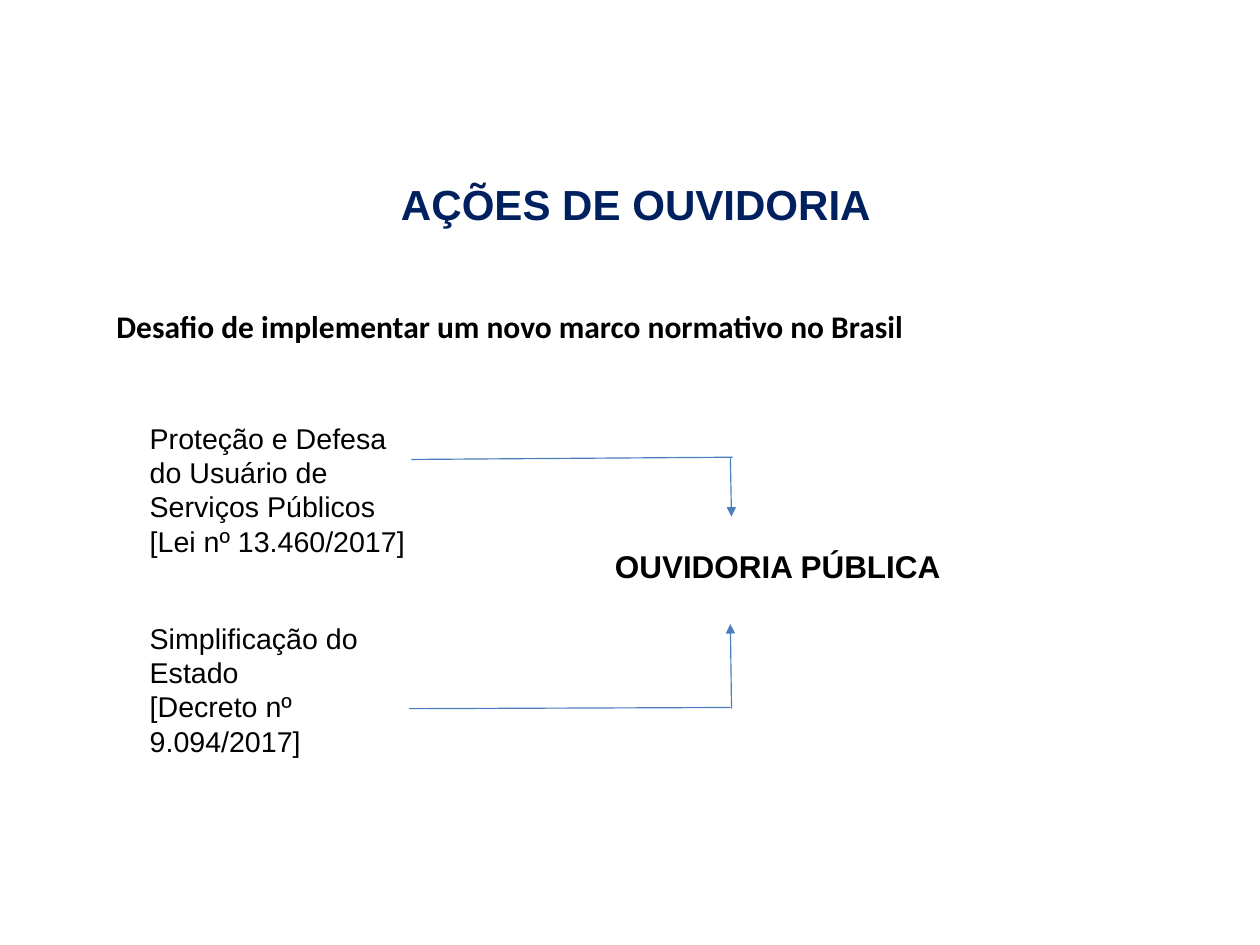
from pptx import Presentation
from pptx.dml.color import RGBColor
from pptx.enum.shapes import MSO_CONNECTOR
from pptx.enum.text import PP_ALIGN
from pptx.oxml.ns import qn
from pptx.util import Inches, Pt
from lxml.etree import SubElement

COLORS = {"navy": "002060", "black": "000000", "blue": "4B7EBC"}

# The page is 28 by 21 cm
deck = Presentation()
deck.slide_width = Inches(28 / 2.54)
deck.slide_height = Inches(21 / 2.54)
slide = deck.slides.add_slide(deck.slide_layouts[6])


def add_text(lines, place, size, bold=False, font="Arial", color="black", pad=0.08):
    box = slide.shapes.add_textbox(*map(Inches, place))
    frame = box.text_frame
    frame.word_wrap = True
    frame.margin_left = frame.margin_right = Inches(pad)
    frame.margin_top = frame.margin_bottom = Inches(pad / 2)
    frame.text = "\n".join(lines)
    for para in frame.paragraphs:
        for run in para.runs:
            run.font.name = font
            run.font.size = Pt(size)
            run.font.bold = bold
            run.font.color.rgb = RGBColor.from_string(COLORS[color])
    return frame


def add_line(start, end, arrow):
    line = slide.shapes.add_connector(
        MSO_CONNECTOR.STRAIGHT, *map(Inches, start + end))
    line.line.width = Pt(0.75)
    line.line.color.rgb = RGBColor.from_string(COLORS["blue"])
    if arrow:
        SubElement(line.get_or_add_ln(), qn("a:tailEnd"), type="triangle")
    SubElement(line._element.spPr, qn("a:effectLst"))


title = add_text(["AÇÕES DE OUVIDORIA"], (2.66, 1.56, 5.81, 0.51), 26.5,
                 bold=True, color="navy", pad=0.1)
title.paragraphs[0].alignment = PP_ALIGN.CENTER
title.paragraphs[0].line_spacing = 0.9

add_text(["Desafio de implementar um novo marco normativo no Brasil"],
         (0.92, 2.64, 8.76, 0.43), 19.8, bold=True, font="Calibri", pad=0.1)

add_text(["Proteção e Defesa do Usuário de Serviços Públicos",
          "[Lei nº 13.460/2017]"], (1.23, 3.64, 2.48, 1.3), 18)
add_text(["Simplificação do Estado", "[Decreto nº 9.094/2017]"],
         (1.23, 5.39, 2.25, 1.3), 18)
add_text(["OUVIDORIA PÚBLICA"], (5.3, 4.75, 4.65, 0.42), 19.8, bold=True)

for start, end, arrow in [
    ((3.6, 4.02), (6.41, 4), False),
    ((6.39, 4), (6.4, 4.52), True),
    ((3.58, 6.2), (6.39, 6.19), False),
    ((6.4, 6.2), (6.39, 5.46), True),
]:
    add_line(start, end, arrow)

deck.save("out.pptx")
